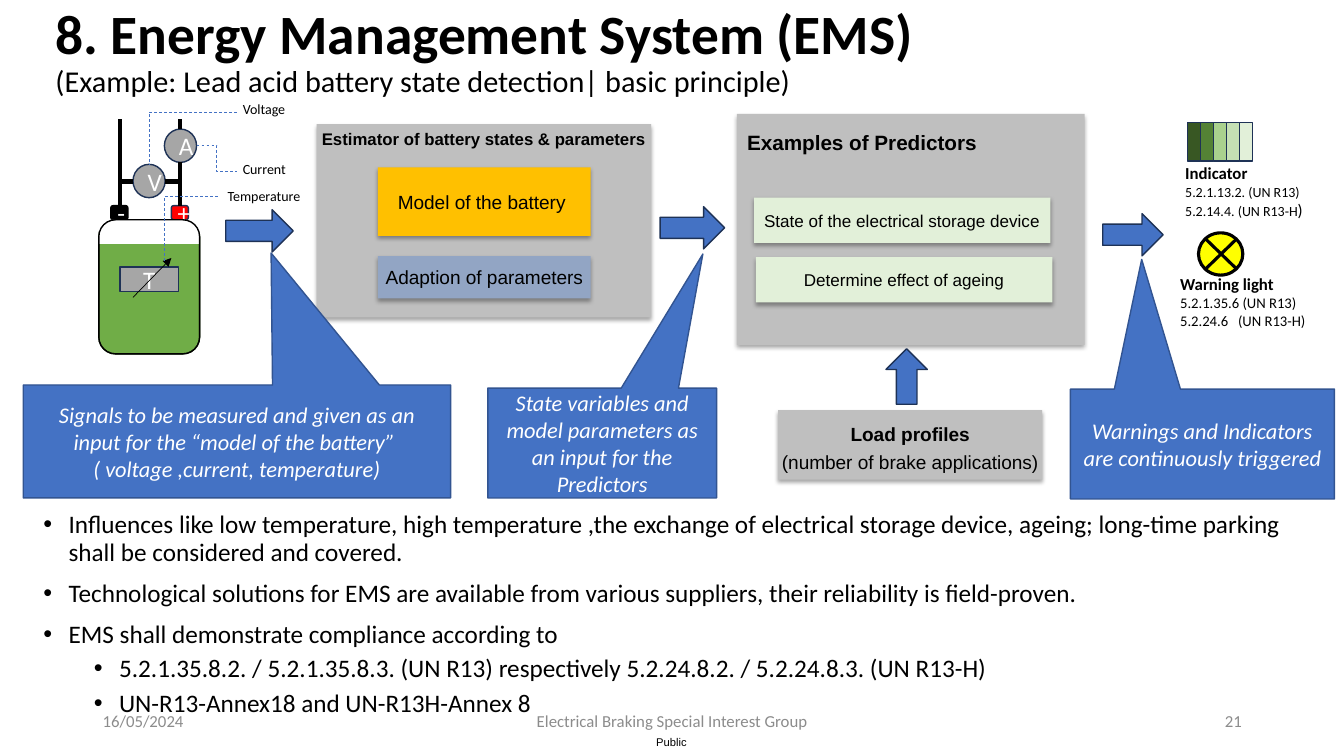
from copy import deepcopy
from dataclasses import dataclass
from typing import Any, NamedTuple

from lxml import etree
from pptx import Presentation
from pptx.dml.color import RGBColor
from pptx.enum import dml, shapes, text
from pptx.oxml import ns
from pptx.util import Pt

KIND, JOIN = shapes.MSO_SHAPE, shapes.MSO_CONNECTOR
ALIGN, ANCHOR = text.PP_ALIGN, text.MSO_ANCHOR
BLACK, WHITE, GREY, DIM = "000000", "FFFFFF", "BFBFBF", "8C8C8C"
BLUE, NAVY, PALE, STEEL = "4472C4", "1E3256", "E2F0D9", "A6A6A6"


class Run(NamedTuple):
    text: str
    size: float
    bold: bool = False
    ital: bool = False


class Box(NamedTuple):
    left: float
    top: float
    width: float
    height: float


@dataclass
class Look:
    font: str = "Calibri"
    color: str = BLACK
    align: Any = ALIGN.LEFT
    anchor: Any = ANCHOR.TOP
    wrap: bool = True
    inset: bool = True


@dataclass
class Part:
    box: Box
    kind: Any = KIND.RECTANGLE
    fill: str = ""
    line: str = ""
    width: float = 1
    runs: tuple = ()
    look: Any = None
    adj: tuple = ()
    turn: int = 0
    shade: bool = False


@dataclass
class Wire:
    ends: tuple
    width: float = 3
    color: str = BLACK
    form: str = "line"
    dash: bool = False
    arrow: bool = False


LABEL = Look()
MID = Look(color=WHITE, align=ALIGN.CENTER, anchor=ANCHOR.MIDDLE)
BLOCK = Look("Arial", BLACK, ALIGN.CENTER, ANCHOR.MIDDLE, False)
HEAD = Look("Arial", BLACK, ALIGN.CENTER, ANCHOR.TOP, False)


def put(item: Any, vals: dict) -> None:
    for key, val in vals.items():
        setattr(item, key, val)


def rgb(code: str) -> RGBColor:
    return RGBColor.from_string(code)


def add(node: Any, tag: str, **vals: str) -> Any:
    """Append a DrawingML child and return it."""
    return etree.SubElement(node, ns.qn("a:" + tag), vals)


def write(frame: Any, paras: list, look: Look) -> None:
    """Fill a text frame; a newline in a run is a line break."""
    put(frame, dict(word_wrap=look.wrap, auto_size=text.MSO_AUTO_SIZE.NONE,
                    vertical_anchor=look.anchor))
    if not look.inset:
        put(frame, {"margin_" + side: 0 for side in ("left", "top", "right", "bottom")})
    for n, runs in enumerate(paras):
        para = frame.add_paragraph() if n else frame.paragraphs[0]
        para.alignment = look.align
        for run in runs:
            for k, line in enumerate(run.text.split("\n")):
                if k:
                    para.add_line_break()
                    para._p[-1].append(deepcopy(bit._r.rPr))
                if line:
                    bit = para.add_run()
                    bit.text = line
                    put(bit.font, dict(name=look.font, size=Pt(run.size),
                                       bold=run.bold, italic=run.ital))
                    bit.font.color.rgb = rgb(look.color)


def draw(slide: Any, part: Part) -> Any:
    item = slide.shapes.add_shape(part.kind, *map(Pt, part.box))
    item.shadow.inherit = False
    item.rotation = part.turn
    for n, val in enumerate(part.adj):
        item.adjustments[n] = val
    if part.fill:
        item.fill.solid()
        item.fill.fore_color.rgb = rgb(part.fill)
    else:
        item.fill.background()
    if part.line:
        item.line.color.rgb = rgb(part.line)
        item.line.width = Pt(part.width)
    else:
        item.line.fill.background()
    if part.shade:
        effect = item.element.spPr.find(ns.qn("a:effectLst"))
        cast = add(effect, "outerShdw", blurRad=str(Pt(3.1)), dist=str(Pt(1.8)),
                   dir="5400000", algn="t", rotWithShape="0")
        add(add(cast, "srgbClr", val=BLACK), "alpha", val="35000")
    if part.runs:
        write(item.text_frame, [part.runs], part.look or MID)
    return item


def label(slide: Any, box: Box, paras: list, look: Look = LABEL) -> None:
    item = slide.shapes.add_textbox(*map(Pt, box))
    write(item.text_frame, paras, look)


def link(slide: Any, wire: Wire) -> None:
    kind = JOIN.STRAIGHT if wire.form == "line" else JOIN.ELBOW
    item = slide.shapes.add_connector(kind, *map(Pt, wire.ends))
    item.line.color.rgb = rgb(wire.color)
    item.line.width = Pt(wire.width)
    if wire.dash:
        item.line.dash_style = dml.MSO_LINE.DASH
    props = item.element.spPr
    props.find(ns.qn("a:prstGeom")).set("prst", wire.form)
    if wire.arrow:
        add(props.find(ns.qn("a:ln")), "tailEnd", type="triangle")
    add(props, "effectLst")


def block(box: Box, fill: str, *runs: Run, look: Look = BLOCK) -> Part:
    return Part(box, fill=fill, runs=runs, look=look, shade=True)


def arrow(*box: float, turn: int = 0) -> Part:
    return Part(Box(*box), KIND.RIGHT_ARROW, BLUE, NAVY, turn=turn)


def call(box: Box, adj: tuple, words: str) -> Part:
    return Part(box, KIND.RECTANGULAR_CALLOUT, BLUE, "325491",
                runs=(Run(words, 16, ital=True),), adj=adj)


def sign(box: Box, kind: Any, fill: str, mark: str, line: str = NAVY) -> Part:
    return Part(box, kind, fill, line, runs=(Run(mark, 18),))


def heads(slide: Any) -> None:
    """Fill the title and the bullet list."""
    title, body = slide.placeholders
    keys = ("left", "top", "width", "height")
    put(title, dict(zip(keys, map(Pt, (32.4, 2.9, 724.3, 69.8)))))
    write(title.text_frame, [[
        Run("8. Energy Management System (EMS)\n", 39.6, True),
        Run("(Example: Lead acid battery state detection| basic principle)", 21.6)]],
        Look(anchor=ANCHOR.MIDDLE))
    title.text_frame.paragraphs[0].line_spacing = 0.9
    put(body, dict(zip(keys, map(Pt, (23.8, 362.2, 920.9, 147.6)))))
    items = [
        (0, "Influences like low temperature, high temperature ,the exchange of electrical storage device, ageing; long-time parking shall be considered and covered."),
        (0, "Technological solutions for EMS are available from various suppliers, their reliability is field-proven."),
        (0, "EMS shall demonstrate compliance according to"),
        (1, "5.2.1.35.8.2. / 5.2.1.35.8.3. (UN R13) respectively 5.2.24.8.2. / 5.2.24.8.3. (UN R13-H)"),
        (1, "UN-R13-Annex18 and UN-R13H-Annex 8")]
    write(body.text_frame, [[Run(words, 18)] for _, words in items], LABEL)
    for para, (level, _) in zip(body.text_frame.paragraphs, items):
        put(para, dict(level=level, line_spacing=0.9, space_before=Pt(5 if level else 10)))
        props = para._p.get_or_add_pPr()
        props.set("marL", str(Pt(18 + 36 * level)))
        props.set("indent", str(Pt(-18)))
        add(props, "buFont", typeface="Arial")
        add(props, "buChar", char="•")


def feet(slide: Any) -> None:
    label(slide, Box(468.7, 525.6, 24.5, 9.4), [[Run("Public", 8)]],
          Look("Arial", wrap=False, inset=False))
    for left, width, words, align in (
            (66.2, 216, "16/05/2024", ALIGN.LEFT),
            (318.2, 324, "Electrical Braking Special Interest Group", ALIGN.CENTER),
            (678.2, 216, "21", ALIGN.RIGHT)):
        label(slide, Box(left, 500.4, width, 28.8), [[Run(words, 12)]],
              Look(color=DIM, align=align, anchor=ANCHOR.MIDDLE))


def flow(slide: Any) -> None:
    """Draw the blocks, arrows and callouts."""
    for part in (
            block(Box(226.1, 88.6, 239, 138.2), GREY,
                  Run("Estimator of battery states & parameters", 12, True), look=HEAD),
            block(Box(270, 119.5, 151.9, 49), "FFC000", Run("Model of the battery ", 13.6)),
            block(Box(270, 182.9, 151.9, 30.2), "92A5C4", Run("Adaption of parameters", 13.6)),
            block(Box(526.3, 81.4, 248.4, 164.9), GREY),
            block(Box(538.6, 141.1, 211.7, 32.4), PALE,
                  Run("State of the electrical storage device", 12.2))):
        draw(slide, part)
    label(slide, Box(524.2, 89.3, 182.9, 25.9),
          [[Run("Examples of Predictors", 14.8, True)]], HEAD)
    load = draw(slide, block(Box(555.8, 293, 188.6, 49.7), GREY, Run("Load profiles\n", 13.6, True),
                             Run("(number of brake applications)", 13.6)))
    put(load.text_frame.paragraphs[0], dict(line_spacing=Pt(20), space_before=Pt(6.8)))
    for part in (
            arrow(161.3, 149.8, 48.2, 30.2),
            call(Box(16.6, 275, 305.3, 80.6), (0.08, -1.67),
                 "Signals to be measured and given as an input for the “model of the battery” \n( voltage ,current, temperature)"),
            arrow(471.6, 147.6, 46.1, 30.2),
            call(Box(348.5, 277.2, 163.4, 78.5), (0.44, -1.72),
                 "State variables and model parameters as an input for the Predictors"),
            block(Box(540, 183.6, 211.7, 32.4), PALE, Run("Determine effect of ageing", 12.2)),
            arrow(627.8, 254.2, 39.6, 29.5, turn=270),
            arrow(787.7, 152.6, 43.2, 30.2),
            call(Box(764.6, 277.9, 188.6, 78.5), (-0.23, -1.68),
                 "Warnings and Indicators are continuously triggered")):
        draw(slide, part)


def alerts(slide: Any) -> None:
    """Draw the charge indicator and the warning light."""
    for n, fill in enumerate(("385723", "548235", "A9D18E", "C5E0B4", PALE)):
        draw(slide, Part(Box(848.2 + 9.3 * n, 87.5, 9.4, 27.4), fill=fill, line=NAVY))
    label(slide, Box(839.5, 113, 105.8, 50.4), [
        [Run("Indicator\n", 12, True), Run("5.2.1.13.2. (UN R13)", 10)],
        [Run("5.2.14.4. (UN R13-H", 10), Run(")", 12)]])
    label(slide, Box(835.9, 192.2, 105.8, 49), [
        [Run("Warning light", 12, True)],
        [Run("5.2.1.35.6 (UN R13) \n5.2.24.6   (UN R13-H)", 10.5)]])
    draw(slide, Part(Box(856.1, 166.3, 31.7, 30.2), KIND.OVAL, "FFFF00", BLACK, 2.25))
    for start, end in ((861.1, 883.4), (883.4, 861.1)):
        link(slide, Wire((start, 192.2, end, 170.6), 2.25))


def cell(slide: Any) -> None:
    """Draw the battery with its meters and wiring."""
    case, oval, bend = KIND.ROUNDED_RECTANGLE, KIND.OVAL, "bentConnector2"
    shell = Box(70.6, 157, 72, 95.8)
    for part in (
            Part(shell, case, "70AD47", "314C1F"),
            sign(Box(79.2, 146.9, 12.2, 10.1), case, BLACK, "-", BLACK),
            sign(Box(122.4, 146.9, 12.2, 10.1), case, "FF0000", "+"),
            Part(shell._replace(height=17.3), case, WHITE, adj=(0,)),
            Part(shell, case, line=BLACK),
            sign(Box(95, 117.4, 23, 23.8), oval, STEEL, "V"),
            sign(Box(85.7, 190.8, 41.8, 17.3), KIND.RECTANGLE, STEEL, "T"),
            sign(Box(117.4, 92.2, 23, 23.8), oval, STEEL, "A")):
        draw(slide, part)
    for wire in (
            Wire((128.5, 146.9, 128.5, 115.9)),
            Wire((118.1, 129.6, 128.5, 141.1), form=bend),
            Wire((95, 129.6, 85.7, 146.9), form=bend),
            Wire((85.7, 146.9, 85.7, 85)),
            Wire((128.5, 92.2, 128.5, 85)),
            Wire((95, 212.4, 122.4, 184.3), 0.5, arrow=True),
            Wire((169.2, 79.9, 106.6, 117.4), 0.5, BLUE, bend, True),
            Wire((140.4, 103.7, 169.2, 122.4), 0.5, BLUE, "bentConnector3", True),
            Wire((155.5, 140.4, 117.4, 187.2), 0.5, BLUE, bend, True)):
        link(slide, wire)
    for left, top, width, words in ((166.3, 68.4, 49.7, "Voltage"),
                                    (166.3, 110.9, 49.7, "Current"),
                                    (155.5, 130.3, 69.1, "Temperature")):
        label(slide, Box(left, top, width, 20.2), [[Run(words, 10)]])


def main() -> None:
    deck = Presentation()
    put(deck, dict(slide_width=Pt(960), slide_height=Pt(540)))
    slide = deck.slides.add_slide(deck.slide_layouts[1])
    for step in (heads, feet, flow, alerts, cell):
        step(slide)
    deck.save("out.pptx")


if __name__ == "__main__":
    main()
